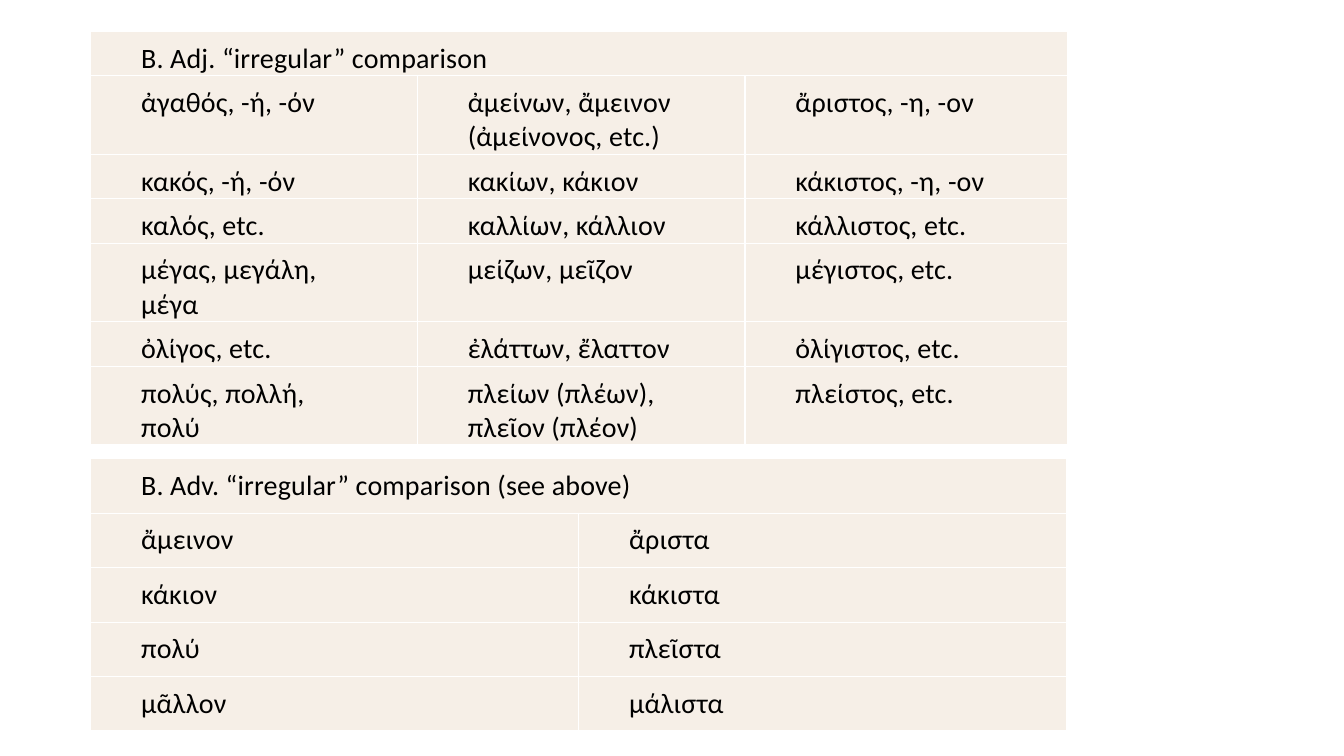
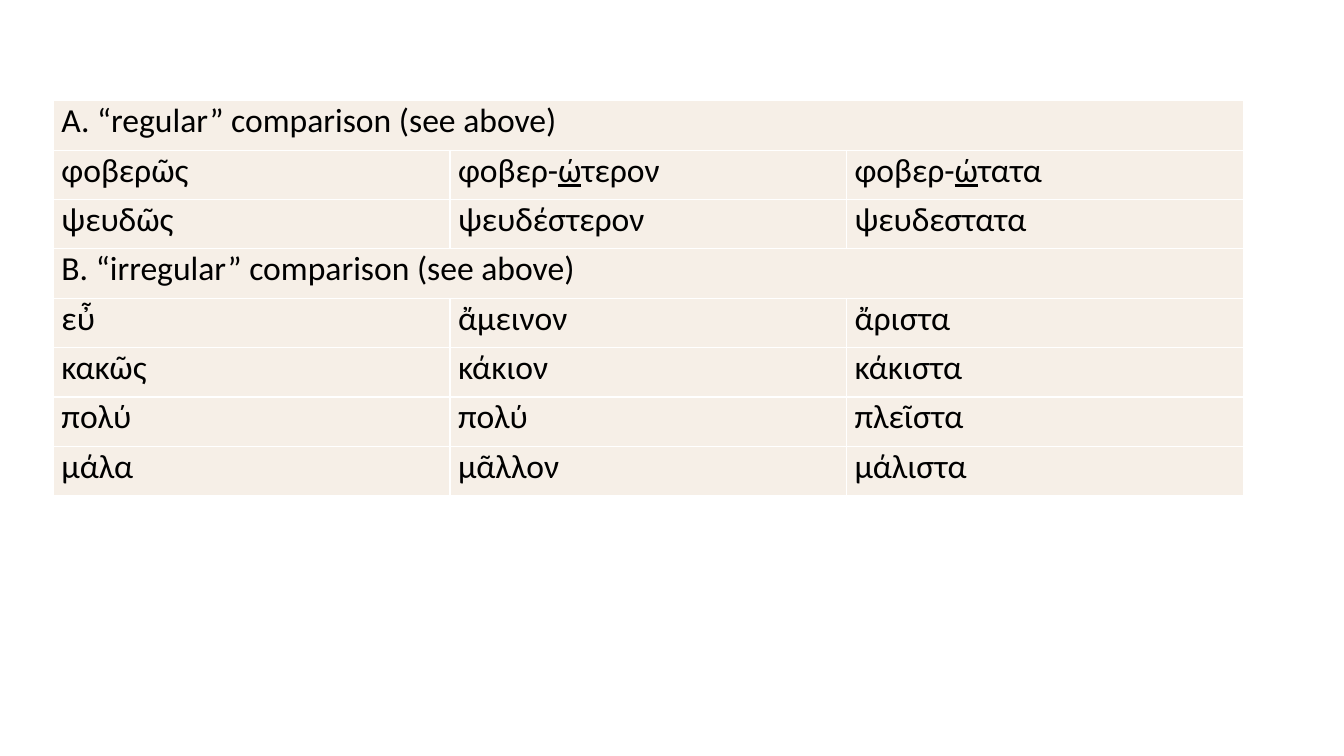
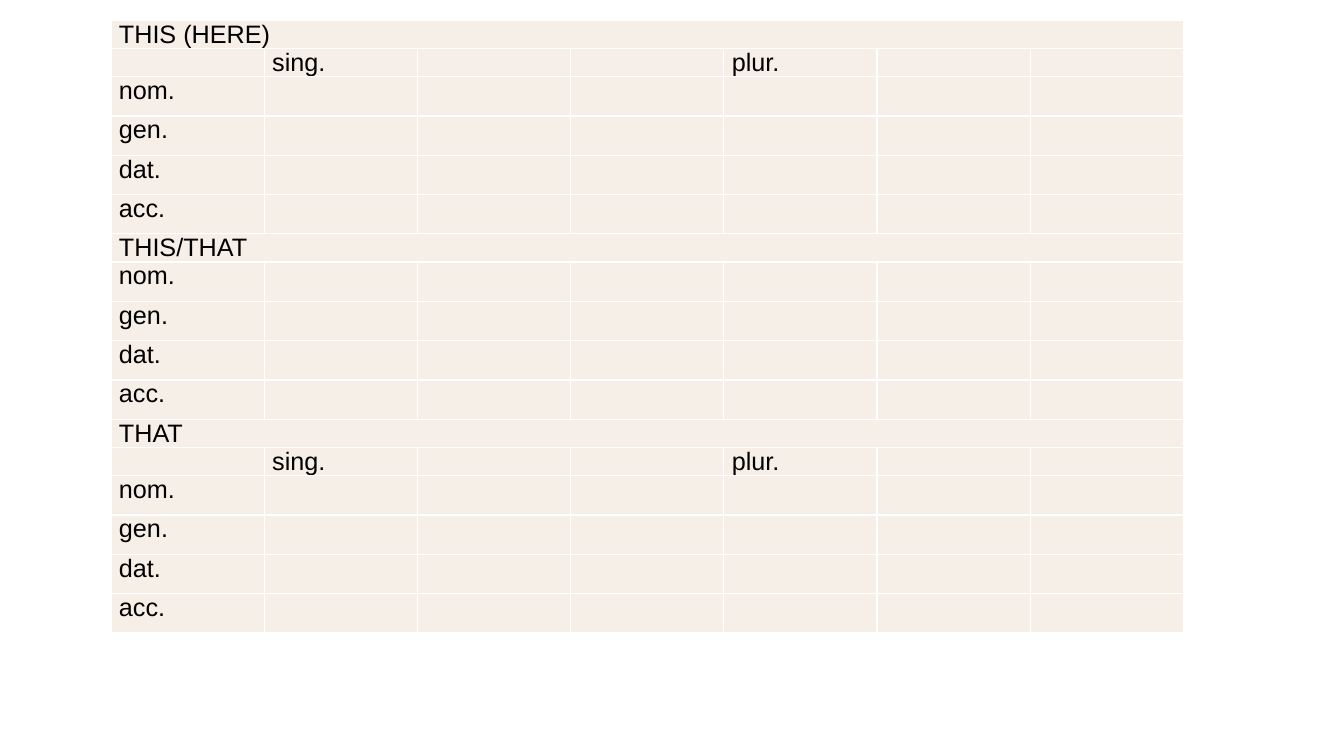
from pptx import Presentation
from pptx import util as u
from pptx.dml.color import RGBColor
from pptx.oxml import ns
from lxml import etree

HUES = {"cell": "F6EFE7", "line": "FFFFFF", "ink": "000000"}

# Polytonic Greek: a plain acute is the oxia, not the modern tonos
TONOS = (0x3AC, 0x3AD, 0x3AE, 0x3AF, 0x3CC, 0x3CD, 0x3CE)
OXIA = dict(zip(TONOS, range(0x1F71, 0x1F7F, 2)))


def border(cell):
    props = cell._tc.get_or_add_tcPr()
    for side in ("lnL", "lnR", "lnT", "lnB"):
        line = etree.SubElement(props, ns.qn("a:" + side), w=str(u.Pt(1)))
        fill = etree.SubElement(line, ns.qn("a:solidFill"))
        etree.SubElement(fill, ns.qn("a:srgbClr"), val=HUES["line"])


def write(cell, words, size, face, space):
    # Underscores enclose underlined letters; a line break starts a paragraph
    frame = cell.text_frame
    for i, line in enumerate(words.translate(OXIA).split("\n")):
        para = frame.add_paragraph() if i else frame.paragraphs[0]
        if not line:
            end = etree.SubElement(para._p, ns.qn("a:endParaRPr"), sz=str(size * 100))
            etree.SubElement(end, ns.qn("a:latin"), typeface=face)
            continue
        for j, part in enumerate(line.split("_")):
            run = para.add_run()
            run.text = part
            run.font.size = u.Pt(size)
            run.font.name = face
            run.font.color.rgb = RGBColor.from_string(HUES["ink"])
            if j % 2:
                run.font.underline = True
            if space:
                run.font._element.set("spc", str(space))


# Rows with a single entry span the whole table
adjs = [
    ["B. Adj. “irregular” comparison"],
    ["ἀγαθός, -ή, -όν", "ἀμείνων, ἄμεινον\n(ἀμείνονος, etc.)", "ἄριστος, -η, -ον"],
    ["κακός, -ή, -όν", "κακίων, κάκιον", "κάκιστος, -η, -ον"],
    ["καλός, etc.", "καλλίων, κάλλιον", "κάλλιστος, etc."],
    ["μέγας, μεγάλη, μέγα", "μείζων, μεῖζον", "μέγιστος, etc."],
    ["ὀλίγος, etc.", "ἐλάττων, ἔλαττον", "ὀλίγιστος, etc."],
    ["πολύς, πολλή, πολύ", "πλείων (πλέων), πλεῖον (πλέον)", "πλείστος, etc."],
]
advs = [
    ["B. Adv. “irregular” comparison (see above)"],
    ["ἄμεινον", "ἄριστα"],
    ["κάκιον", "κάκιστα"],
    ["πολύ", "πλεῖστα"],
    ["μᾶλλον", "μάλιστα"],
]
both = [
    ["A. “regular” comparison (see above)"],
    ["φοβερῶς", "φοβερ-_ώ_τερον", "φοβερ-_ώ_τατα"],
    ["ψευδῶς", "ψευδέστερον", "ψευδεστατα"],
    ["B. “irregular” comparison (see above)"],
    ["εὖ", "ἄμεινον", "ἄριστα"],
    ["κακῶς", "κάκιον", "κάκιστα"],
    ["πολύ", "πολύ", "πλεῖστα"],
    ["μάλα", "μᾶλλον", "μάλιστα"],
]
count = ["", "sing.", "", "", "plur.", "", ""]
cases = [[name] + [""] * 6 for name in ("nom.", "gen.", "dat.", "acc.")]
forms = [["THIS (HERE)"], count, *cases, ["THIS/THAT"], *cases, ["THAT"], count, *cases]
highs = [0.39 if row in cases else 0.28 for row in forms]

# Each slide: left, top, widths, heights, margins, size, face, spacing, rows
wide = (0.5, 0.1, 0.5, 0)
even = (0.5, 0.1, 0.5, 0.1)
slim = (0.08, 0, 0.08, 0)
pages = [
    [
        (0.9, 0.31, [3.24, 3.25, 3.2], [0.44, 0.78, 0.44, 0.44, 0.78, 0.44, 0.78],
         wide, 20, "Calibri", 10, adjs),
        (0.9, 4.55, [4.84] * 2, [0.54] * 5, even, 20, "Calibri", 10, advs),
    ],
    [(0.53, 1, [11.8 / 3] * 3, [0.49] * 8, slim, 24, "Calibri", 0, both)],
    [(1.1, 0.2, [1.52] * 7, highs, slim, 18, "Arial", 0, forms)],
]

deck = Presentation()
deck.slide_width = u.Inches(13.33)
deck.slide_height = u.Inches(7.5)

for page in pages:
    slide = deck.slides.add_slide(deck.slide_layouts[6])
    for left, top, wides, talls, pads, size, face, space, rows in page:
        frame = slide.shapes.add_table(
            len(rows), len(wides), u.Inches(left), u.Inches(top),
            u.Inches(sum(wides)), u.Inches(sum(talls)))
        table = frame.table
        table.first_row = table.horz_banding = False
        for col, width in zip(table.columns, wides):
            col.width = u.Inches(width)
        for r, (row, tall) in enumerate(zip(rows, talls)):
            table.rows[r].height = u.Inches(tall)
            # Cell look
            for c in range(len(wides)):
                cell = table.cell(r, c)
                border(cell)
                cell.fill.solid()
                cell.fill.fore_color.rgb = RGBColor.from_string(HUES["cell"])
                (cell.margin_left, cell.margin_top,
                 cell.margin_right, cell.margin_bottom) = map(u.Inches, pads)
            # Cell text
            if len(row) == 1:
                table.cell(r, 0).merge(table.cell(r, len(wides) - 1))
            for c, words in enumerate(row):
                write(table.cell(r, c), words, size, face, space)

deck.save("out.pptx")
